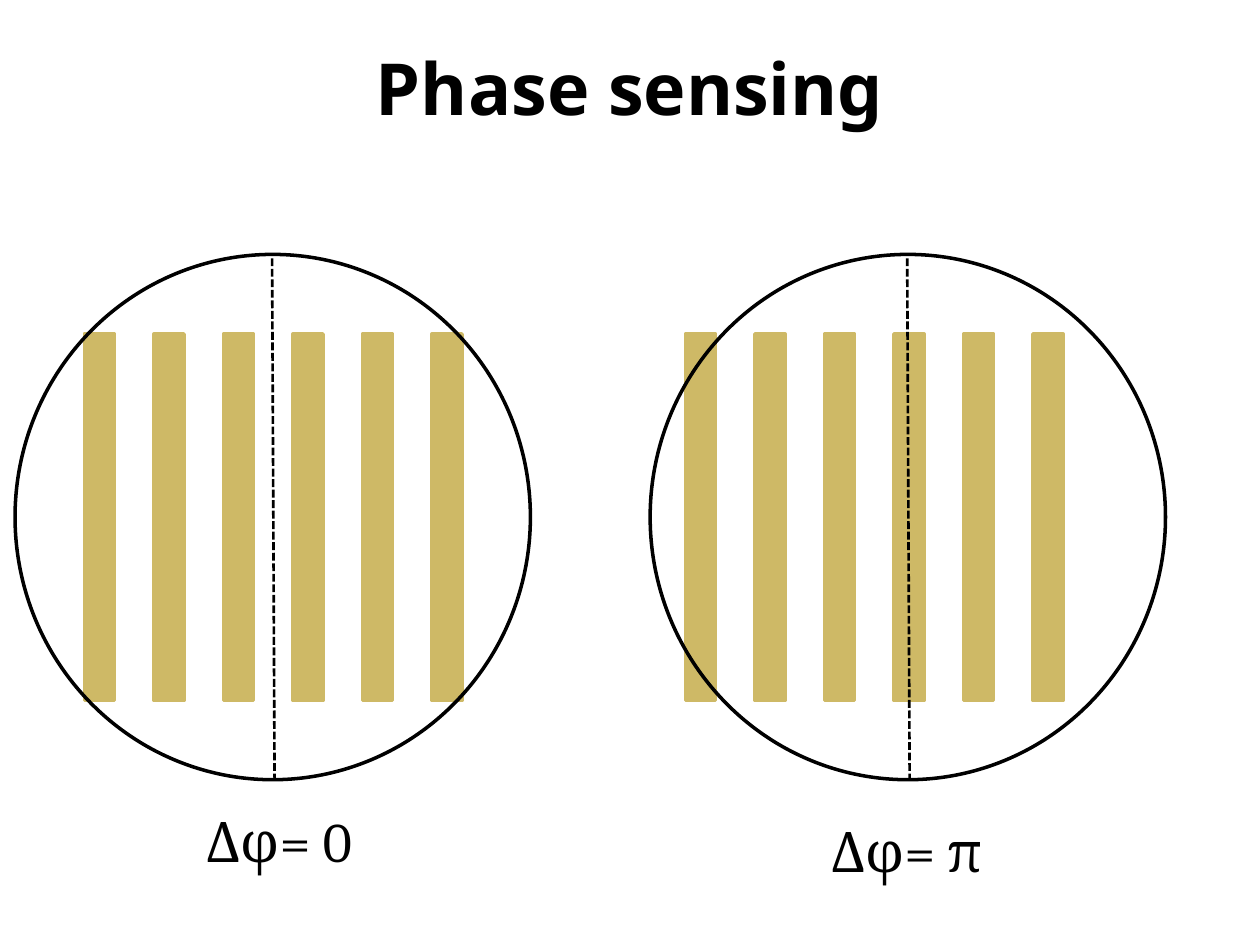
from pptx import Presentation
from pptx.dml.color import RGBColor
from pptx.enum.dml import MSO_LINE
from pptx.enum.shapes import MSO_CONNECTOR, MSO_SHAPE
from pptx.enum.text import MSO_ANCHOR, PP_ALIGN
from pptx.oxml.ns import qn
from pptx.util import Pt
from lxml import etree

RECTANGLE, OVAL = MSO_SHAPE.RECTANGLE, MSO_SHAPE.OVAL
STRAIGHT = MSO_CONNECTOR.STRAIGHT
DASHED = MSO_LINE.SQUARE_DOT
TOP = MSO_ANCHOR.TOP
LEFT, CENTER = PP_ALIGN.LEFT, PP_ALIGN.CENTER

BLACK, GOLD = "000000", "CEB966"
CIRCLE_WIDTH, CIRCLE_HEIGHT = 294.5, 300.2
BAR_COUNT, BAR_PITCH = 6, 39.72
BAR_TOP, BAR_WIDTH, BAR_HEIGHT = 45.4, 17.3, 209.5

TITLE_FORMAT = {"name": "Noto Sans", "size": Pt(41), "bold": True}
LABEL_FORMAT = {"name": "Cambria", "size": Pt(32)}

FRINGE_VIEWS = [
    {"left": 8.6, "top": 145.4, "bar_offset": 39.6,
     "label": "Δφ= 0", "label_offset": (102.3, 311.8)},
    {"left": 371.5, "top": 145.4, "bar_offset": 20.2,
     "label": "Δφ= π", "label_offset": (96.5, 317.6)},
]


def color(value):
    """Return the colour for a hex string."""
    return RGBColor.from_string(value)


def add_text(slide, text, left, top, width, height, font_format, alignment=LEFT):
    """Add a top-anchored text box with one formatted line."""
    shape = slide.shapes.add_textbox(Pt(left), Pt(top), Pt(width), Pt(height))
    frame = shape.text_frame
    frame.word_wrap = True
    frame.vertical_anchor = TOP
    paragraph = frame.paragraphs[0]
    paragraph.alignment = alignment
    run = paragraph.add_run()
    run.text = text
    for attribute, value in font_format.items():
        setattr(run.font, attribute, value)
    run.font.color.rgb = color(BLACK)


def add_figure(slide, kind, left, top, width, height, line, fill=None):
    """Add an outlined preset shape, filled if a colour is given."""
    shape = slide.shapes.add_shape(kind, Pt(left), Pt(top), Pt(width), Pt(height))
    shape.shadow.inherit = False
    shape.line.color.rgb = color(line)
    shape.line.width = Pt(2)
    if fill:
        shape.fill.solid()
        shape.fill.fore_color.rgb = color(fill)
    else:
        shape.fill.background()


def add_axis(slide, left, top):
    """Add the dashed, slightly tilted axis of a circle."""
    axis = slide.shapes.add_connector(
        STRAIGHT, Pt(left + 146.9), Pt(top + 2.2), Pt(left + 148.3), Pt(top + 299.6))
    axis.line.color.rgb = color(BLACK)
    axis.line.width = Pt(1.5)
    axis.line.dash_style = DASHED
    etree.SubElement(axis.element.spPr, qn("a:effectLst"))


def add_fringe_view(slide, left, top, bar_offset, label, label_offset):
    """Add a circle over interference bars, with its axis and phase label."""
    for index in range(BAR_COUNT):
        add_figure(slide, RECTANGLE, left + bar_offset + index * BAR_PITCH,
                   top + BAR_TOP, BAR_WIDTH, BAR_HEIGHT, GOLD, GOLD)
    add_figure(slide, OVAL, left, top, CIRCLE_WIDTH, CIRCLE_HEIGHT, BLACK)
    add_axis(slide, left, top)
    label_left, label_top = label_offset
    add_text(slide, label, left + label_left, top + label_top, 209.5, 45.4, LABEL_FORMAT)


def main():
    """Build and save the phase sensing slide."""
    presentation = Presentation()
    presentation.slide_width, presentation.slide_height = Pt(720), Pt(540)
    slide = presentation.slides.add_slide(presentation.slide_layouts[6])
    add_text(slide, "Phase sensing", 36, 21.6, 648, 90, TITLE_FORMAT, CENTER)
    for view in FRINGE_VIEWS:
        add_fringe_view(slide, **view)
    presentation.save("out.pptx")


if __name__ == "__main__":
    main()
